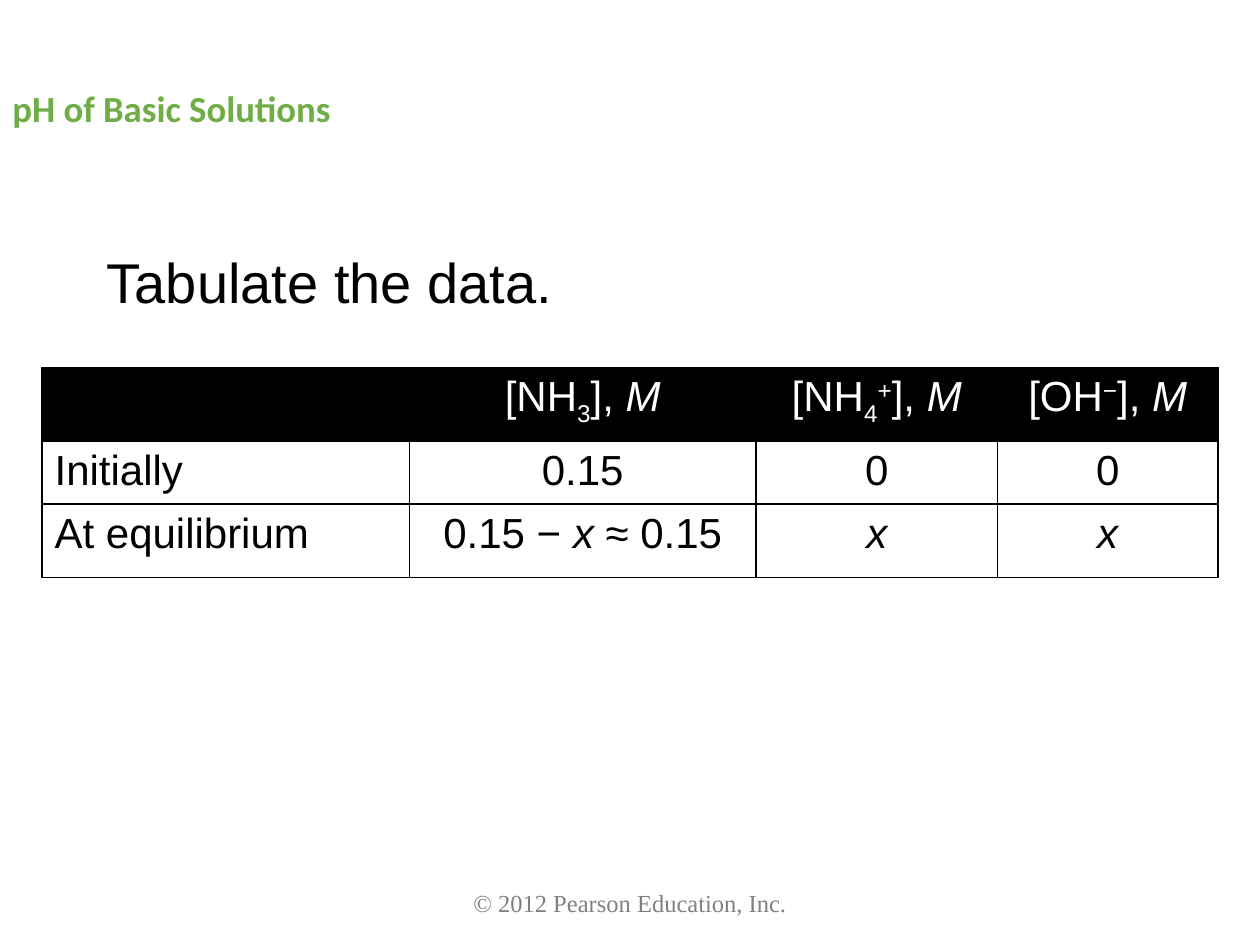
"""Build a slide tabulating concentrations for the pH of a basic solution."""
from dataclasses import dataclass

from lxml import etree
from pptx import Presentation
from pptx import util as u
from pptx.dml.color import RGBColor
from pptx.enum import text
from pptx.oxml.ns import qn

PX = 9525
CENTER, LEFT = text.PP_ALIGN.CENTER, text.PP_ALIGN.LEFT
MIDDLE, TOP, BOTTOM = (text.MSO_ANCHOR.MIDDLE, text.MSO_ANCHOR.TOP,
                       text.MSO_ANCHOR.BOTTOM)


@dataclass(frozen=True)
class Run:
    text: str
    italic: bool = False
    baseline: int = 0


@dataclass(frozen=True)
class Label:
    text: str
    box: tuple[int, int, int, int]
    font: dict
    anchor: text.MSO_ANCHOR = TOP
    align: text.PP_ALIGN = LEFT
    wrap: bool = True
    line_spacing: float = 1.0


def px(n: int) -> u.Emu:
    return u.Emu(n * PX)


def color(hex_value: str) -> RGBColor:
    return RGBColor.from_string(hex_value)


def font(name: str, size: int, hex_value: str, **extra) -> dict:
    return {"name": name, "size": u.Pt(size), "color": hex_value, **extra}


def write(p, runs: list[Run], fmt: dict) -> None:
    for run in runs:
        r = p.add_run()
        r.text = run.text
        for key, value in {**fmt, "italic": run.italic}.items():
            if key == "color":
                r.font.color.rgb = color(value)
            else:
                setattr(r.font, key, value)
        if run.baseline:
            r._r.get_or_add_rPr().set("baseline", str(run.baseline * 1000))


def add_label(s, label: Label) -> None:
    tf = s.shapes.add_textbox(*map(px, label.box)).text_frame
    tf.word_wrap = label.wrap
    tf.vertical_anchor = label.anchor
    p = tf.paragraphs[0]
    p.alignment = label.align
    p.line_spacing = label.line_spacing
    write(p, [Run(label.text)], label.font)


def add_borders(cell, hex_value: str, width: u.Emu) -> None:
    tc_pr = cell._tc.get_or_add_tcPr()
    for i, side in enumerate(("lnL", "lnR", "lnT", "lnB")):
        ln = etree.Element(qn(f"a:{side}"), w=str(int(width)))
        fill = etree.SubElement(ln, qn("a:solidFill"))
        etree.SubElement(fill, qn("a:srgbClr"), val=hex_value)
        tc_pr.insert(i, ln)


def add_table(s, left: int, top: int, widths: list[int], heights: list[int],
              rows: list[list[list[Run]]]) -> None:
    table = s.shapes.add_table(len(heights), len(widths), px(left), px(top),
                               px(sum(widths)), px(sum(heights))).table
    for column, width in zip(table.columns, widths):
        column.width = px(width)
    for i, (row, height) in enumerate(zip(rows, heights)):
        table.rows[i].height = px(height)
        for j, runs in enumerate(row):
            cell = table.cell(i, j)
            if i == 0:
                cell.fill.solid()
                cell.fill.fore_color.rgb = color("000000")
            else:
                cell.fill.background()
            add_borders(cell, "000000", u.Pt(1))
            p = cell.text_frame.paragraphs[0]
            p.alignment = CENTER if j else LEFT
            write(p, runs, font("Arial", 24, "000000" if i else "FFFFFF"))


LABELS = [
    Label("pH of Basic Solutions", (0, 24, 960, 120),
          font("Calibri", 21, "70AD47", bold=True), MIDDLE, line_spacing=0.9),
    Label("Tabulate the data.", (72, 184, 363, 61),
          font("Arial", 32, "000000"), wrap=False),
    Label("© 2012 Pearson Education, Inc.", (232, 656, 496, 48),
          font("Times New Roman", 14, "808080"), BOTTOM, CENTER),
]

MOLAR = [Run("], "), Run("M", italic=True)]
UNKNOWN = [Run("x", italic=True)]
ROWS = [
    [[],
     [Run("[NH"), Run("3", baseline=-25), *MOLAR],
     [Run("[NH"), Run("4", baseline=-25), Run("+", baseline=30), *MOLAR],
     [Run("[OH"), Run("−", baseline=30), *MOLAR]],
    [[Run("Initially")], [Run("0.15")], [Run("0")], [Run("0")]],
    [[Run("At equilibrium")],
     [Run("0.15 − "), Run("x ", italic=True), Run("≈ 0.15")],
     UNKNOWN, UNKNOWN],
]


def main() -> None:
    prs = Presentation()
    prs.slide_width, prs.slide_height = px(960), px(720)
    s = prs.slides.add_slide(prs.slide_layouts[6])
    for label in LABELS:
        add_label(s, label)
    add_table(s, 32, 280, [280, 264, 184, 168], [56, 48, 56], ROWS)
    prs.save("out.pptx")


if __name__ == "__main__":
    main()
